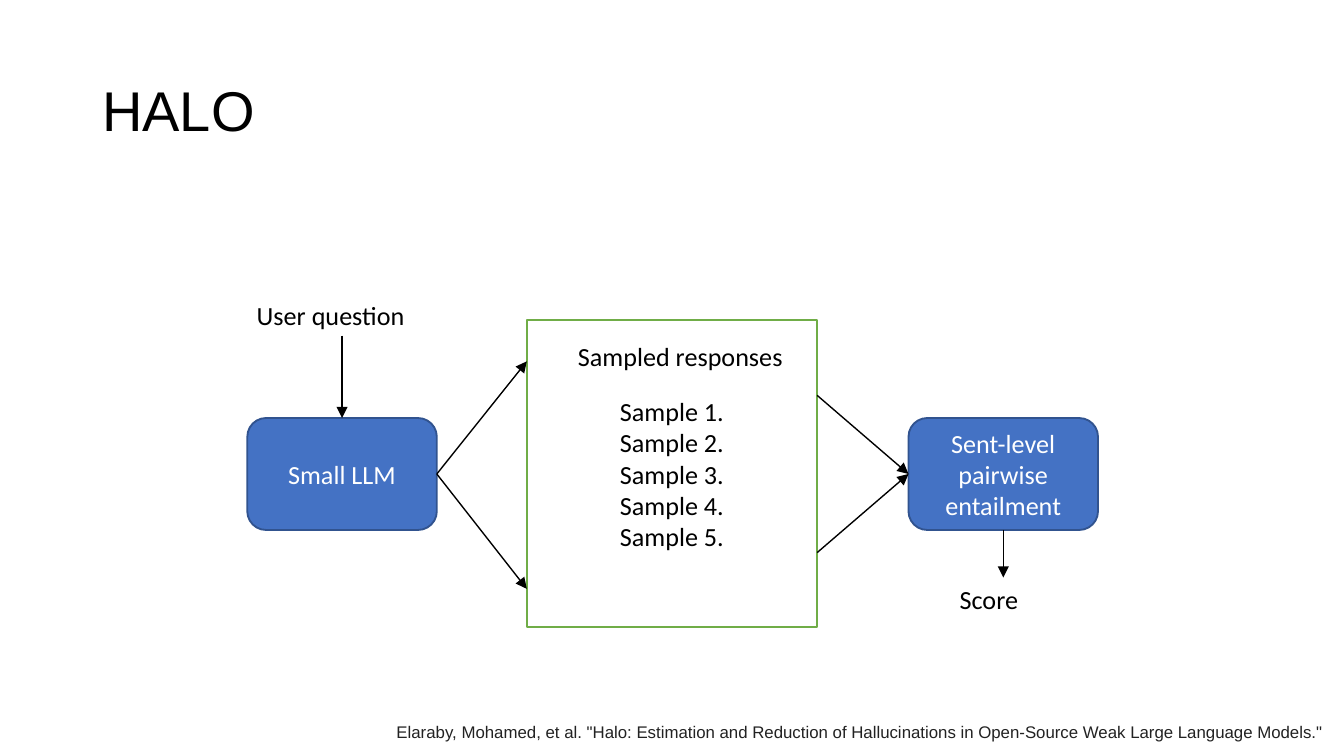
import pptx
import pptx.util
import pptx.dml.color
import pptx.enum.shapes
import pptx.enum.text
import pptx.oxml
import pptx.oxml.ns

SHAPE = pptx.enum.shapes.MSO_SHAPE
ALIGN = pptx.enum.text.PP_ALIGN
ANCHOR = pptx.enum.text.MSO_ANCHOR
COLORS = {
    "text": "000000", "citation": "222222", "on_fill": "FFFFFF",
    "step": "4472C4", "step_line": "31538F",
    "panel": "FFFFFF", "panel_line": "70AD47",
}

prs = pptx.Presentation()
prs.slide_width = pptx.util.Inches(10)
prs.slide_height = pptx.util.Inches(5.625)
s = prs.slides.add_slide(prs.slide_layouts[6])

# Grid of 100 columns by 100 rows
COL = prs.slide_width / 100
ROW = prs.slide_height / 100


def rgb(name):
    return pptx.dml.color.RGBColor.from_string(COLORS[name])


def add_box(box, lines, color="text", size=14, font="Calibri", align=ALIGN.LEFT,
            anchor=ANCHOR.TOP, fill=None, shape=None):
    """Add text at (left, top, width, height) in grid units, in a preset shape if given."""
    x, y, w, h = box
    place = [int(v) for v in (x * COL, y * ROW, w * COL, h * ROW)]
    if shape is None:
        sp = s.shapes.add_textbox(*place)
    else:
        sp = s.shapes.add_shape(shape, *place)
        sp.shadow.inherit = False
        sp.fill.solid()
        sp.fill.fore_color.rgb = rgb(fill)
        sp.line.color.rgb = rgb(fill + "_line")
        sp.line.width = pptx.util.Pt(1)
    tf = sp.text_frame
    tf.word_wrap = True
    tf.vertical_anchor = anchor
    tf.margin_left = tf.margin_right = pptx.util.Inches(0.07)
    tf.margin_top = tf.margin_bottom = pptx.util.Inches(0.04)
    tf.text = "\n".join(lines)
    for p in tf.paragraphs:
        p.alignment = align
        p.font.name = font
        p.font.size = pptx.util.Pt(size)
        p.font.color.rgb = rgb(color)
    return sp


# Flow positions
STEP_Y, STEP_W, STEP_H = 55.3, 14.1, 14.8
LLM_X, ENTAIL_X = 18.4, 67.6
PANEL_X, PANEL_W = 39.2, 21.6
LABEL_H = 5.5
step_mid = STEP_Y + STEP_H / 2
step_end = STEP_Y + STEP_H
llm_right = LLM_X + STEP_W
panel_right = PANEL_X + PANEL_W
llm_mid = LLM_X + STEP_W / 2
score_mid = ENTAIL_X + STEP_W / 2
question_y, score_y = 38.9, 76.4

add_box((6.9, 5.3, 86.2, 19.4), ["HALO"], size=30, font="Arial",
        anchor=ANCHOR.MIDDLE).text_frame.paragraphs[0].line_spacing = 0.9

for x, label in ((LLM_X, "Small LLM"), (ENTAIL_X, "Sent-level pairwise entailment")):
    add_box((x, STEP_Y, STEP_W, STEP_H), [label], color="on_fill", align=ALIGN.CENTER,
            anchor=ANCHOR.MIDDLE, fill="step", shape=SHAPE.ROUNDED_RECTANGLE)

add_box((PANEL_X, 42.3, PANEL_W, 40.7), [f"Sample {i}." for i in range(1, 6)],
        align=ALIGN.CENTER, anchor=ANCHOR.MIDDLE, fill="panel", shape=SHAPE.RECTANGLE)

for x, y, w, label in (
    (LLM_X, question_y, STEP_W, "User question"),
    (42.3, 44.3, 19.6, "Sampled responses"),
    (70.7, score_y, 7.9, "Score"),
):
    add_box((x, y, w, LABEL_H), [label])

for x1, y1, x2, y2 in (
    (llm_mid, question_y + LABEL_H, llm_mid, STEP_Y),
    (llm_right, step_mid, PANEL_X, 47.8),
    (llm_right, step_mid, PANEL_X, 77.9),
    (panel_right, 52.3, ENTAIL_X, step_mid),
    (panel_right, 73.1, ENTAIL_X, step_mid),
    (score_mid, step_end, score_mid, score_y),
):
    arrow = s.shapes.add_connector(
        pptx.enum.shapes.MSO_CONNECTOR.STRAIGHT,
        int(x1 * COL), int(y1 * ROW), int(x2 * COL), int(y2 * ROW))
    arrow.line.color.rgb = rgb("text")
    arrow.line.width = pptx.util.Pt(0.75)
    head = pptx.oxml.parse_xml(f'<a:tailEnd {pptx.oxml.ns.nsdecls("a")} type="triangle"/>')
    arrow.line._get_or_add_ln().append(head)
    no_shadow = pptx.oxml.parse_xml(f'<a:effectLst {pptx.oxml.ns.nsdecls("a")}/>')
    arrow._element.spPr.append(no_shadow)

add_box((28.8, 94.8, 71.2, 4.1),
        ['Elaraby, Mohamed, et al. "Halo: Estimation and Reduction of Hallucinations '
         'in Open-Source Weak Large Language Models."'],
        color="citation", size=9, font="Arial")

prs.save("out.pptx")
